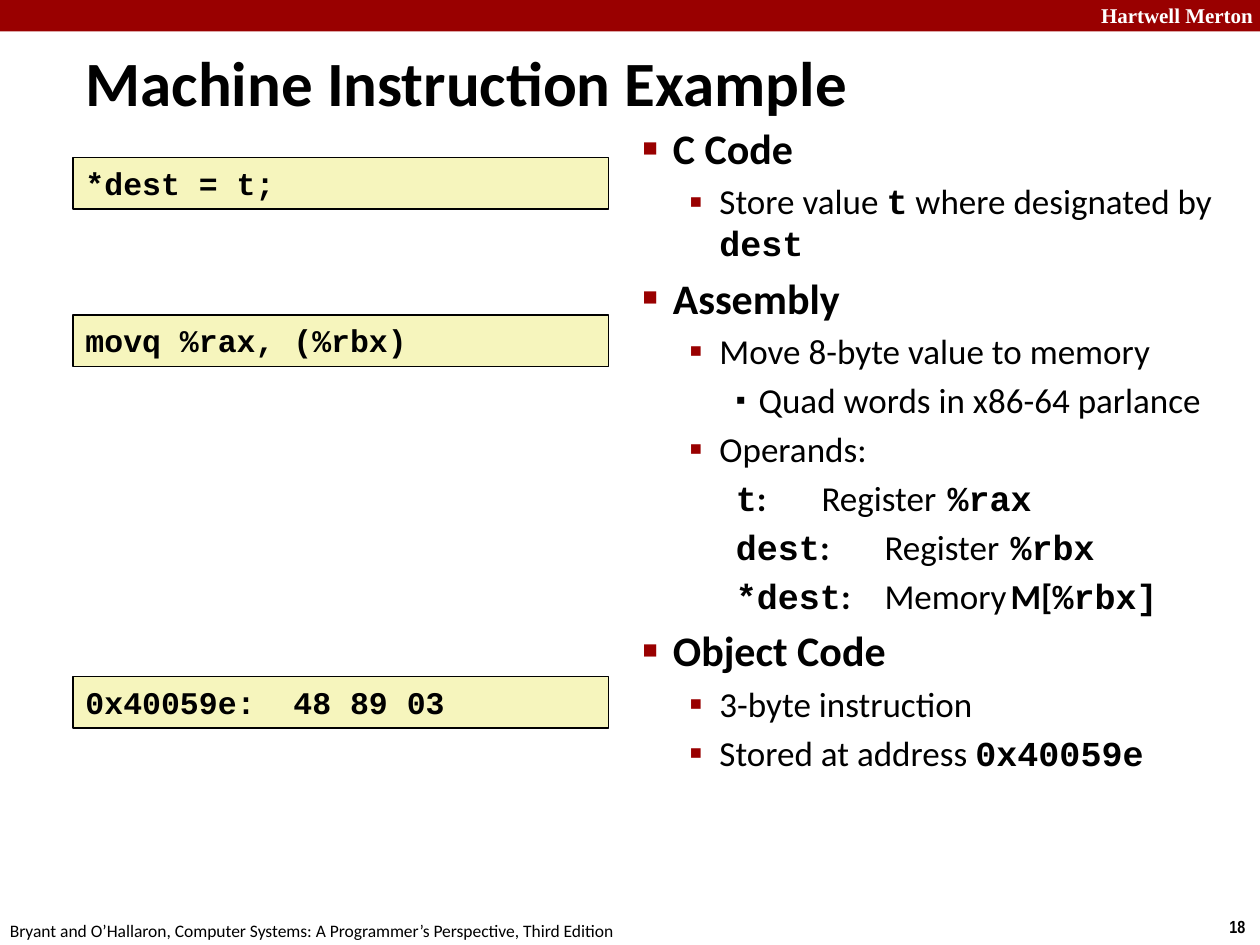
from lxml.etree import SubElement
from pptx import Presentation
from pptx.dml.color import RGBColor
from pptx.enum.shapes import MSO_SHAPE
from pptx.enum.text import MSO_ANCHOR, MSO_AUTO_SIZE, PP_ALIGN
from pptx.oxml.ns import qn
from pptx.util import Inches, Pt

COLORS = {"red": "990000", "code": "F6F5BD", "black": "000000", "white": "FFFFFF"}

# Run styles: font name, bold
STYLES = {
    "plain": ("Calibri", False),
    "bold": ("Calibri", True),
    "code": ("Courier New", True),
    "serif": ("Times New Roman", True),
    "number": ("Arial Narrow", True),
}

# Outline levels: text size, margin, hanging indent, bullet, bullet color, bullet percent
LEVELS = [
    (24, 0.24, 0.24, "■", "red", 60),
    (20, 0.61, 0.24, "▪", "red", 110),
    (20, 0.92, 0.18, "▪", "black", 80),
]
TABS = (1.75, 2.75)


def add_run(p, text, style, size, color="black"):
    r = p.add_run()
    r.text = text
    r.font.name, r.font.bold = STYLES[style]
    r.font.size = Pt(size)
    r.font.color.rgb = RGBColor.from_string(COLORS[color])


def format_level(p, level, bulleted):
    """Set indents, bullet and tab stops of an outline paragraph."""
    size, margin, hanging, char, color, percent = LEVELS[level]
    p.level = level
    pPr = p._p.get_or_add_pPr()
    pPr.set("marL", str(Inches(margin)))
    pPr.set("indent", str(-Inches(hanging)))
    if bulleted:
        clr = SubElement(pPr, qn("a:buClr"))
        SubElement(clr, qn("a:srgbClr"), val=COLORS[color])
        SubElement(pPr, qn("a:buSzPct"), val=str(percent * 1000))
        SubElement(pPr, qn("a:buChar"), char=char)
    else:
        SubElement(pPr, qn("a:buNone"))
    tabs = SubElement(pPr, qn("a:tabLst"))
    for pos in TABS:
        SubElement(tabs, qn("a:tab"), pos=str(Inches(pos)), algn="l")


prs = Presentation()
prs.slide_width, prs.slide_height = Inches(10), Inches(7.5)
W, H = prs.slide_width, prs.slide_height
slide = prs.slides.add_slide(prs.slide_layouts[1])
title, body = slide.shapes.title, slide.placeholders[1]
left = Inches(0.58)

# Header band
band = slide.shapes.add_shape(MSO_SHAPE.RECTANGLE, 0, 0, W, H // 30)
band.shadow.inherit = False
band.fill.solid()
band.fill.fore_color.rgb = RGBColor.from_string(COLORS["red"])
band.line.fill.background()

# Header and footer texts
for text, style, size, color, box, wrap in [
    ("Hartwell Merton", "serif", 12, "white", (8.64, -0.03, 1.43, 0.3), True),
    ("18", "number", 10, "black", (9.66, 7.22, 0.34, 0.27), False),
    ("Bryant and O’Hallaron, Computer Systems: A Programmer’s Perspective, Third Edition",
     "plain", 10, "black", (-0.02, 7.25, 5.08, 0.27), False),
]:
    tf = slide.shapes.add_textbox(*map(Inches, box)).text_frame
    tf.word_wrap = wrap
    add_run(tf.paragraphs[0], text, style, size, color)

# Title
title.left, title.top, title.width, title.height = left, Inches(0.33), Inches(7.94), Inches(0.63)
tf = title.text_frame
tf.auto_size = MSO_AUTO_SIZE.NONE
tf.vertical_anchor = MSO_ANCHOR.MIDDLE
p = tf.paragraphs[0]
p.alignment = PP_ALIGN.LEFT
pPr = p._p.get_or_add_pPr()
pPr.set("marL", str(Inches(0.13)))
pPr.set("indent", str(-Inches(0.13)))
add_run(p, "Machine Instruction Example", "bold", 36)

# Outline: level, bulleted, runs
outline = [
    (0, True, [("C Code", "bold")]),
    (1, True, [("Store value ", "plain"), ("t", "code"),
               (" where designated by ", "plain"), ("dest", "code")]),
    (0, True, [("Assembly", "bold")]),
    (1, True, [("Move 8-byte value to memory", "plain")]),
    (2, True, [("Quad words in x86-64 parlance", "plain")]),
    (1, True, [("Operands:", "plain")]),
    (2, False, [("t", "code"), (":\t", "bold"), ("Register\t", "plain"), ("%rax", "code")]),
    (2, False, [("dest", "code"), (":\t", "bold"), ("Register\t", "plain"), ("%rbx", "code")]),
    (2, False, [("*dest", "code"), (": ", "bold"), ("\tMemory\t", "plain"),
                ("M[", "bold"), ("%rbx]", "code")]),
    (0, True, [("Object Code", "bold")]),
    (1, True, [("3-byte instruction", "plain")]),
    (1, True, [("Stored at address ", "plain"), ("0x40059e", "code")]),
]
body.left, body.top, body.width, body.height = W // 2, Inches(0.92), W // 2, Inches(6.33)
tf = body.text_frame
tf.auto_size = MSO_AUTO_SIZE.NONE
for i, (level, bulleted, runs) in enumerate(outline):
    p = tf.add_paragraph() if i else tf.paragraphs[0]
    format_level(p, level, bulleted)
    for text, style in runs:
        add_run(p, text, style, LEVELS[level][0])

# Code boxes
for top, code in [
    (1.25, "*dest = t;"),
    (2.5, "movq %rax, (%rbx)"),
    (5.37, "0x40059e:  48 89 03"),
]:
    sp = slide.shapes.add_shape(MSO_SHAPE.RECTANGLE, left, Inches(top), Inches(4.25), Inches(0.41))
    sp.shadow.inherit = False
    sp.fill.solid()
    sp.fill.fore_color.rgb = RGBColor.from_string(COLORS["code"])
    sp.line.color.rgb = RGBColor.from_string(COLORS["black"])
    sp.line.width = Pt(1)
    tf = sp.text_frame
    tf.vertical_anchor = MSO_ANCHOR.TOP
    p = tf.paragraphs[0]
    p.alignment = PP_ALIGN.LEFT
    add_run(p, code, "code", 18)

prs.save("out.pptx")
